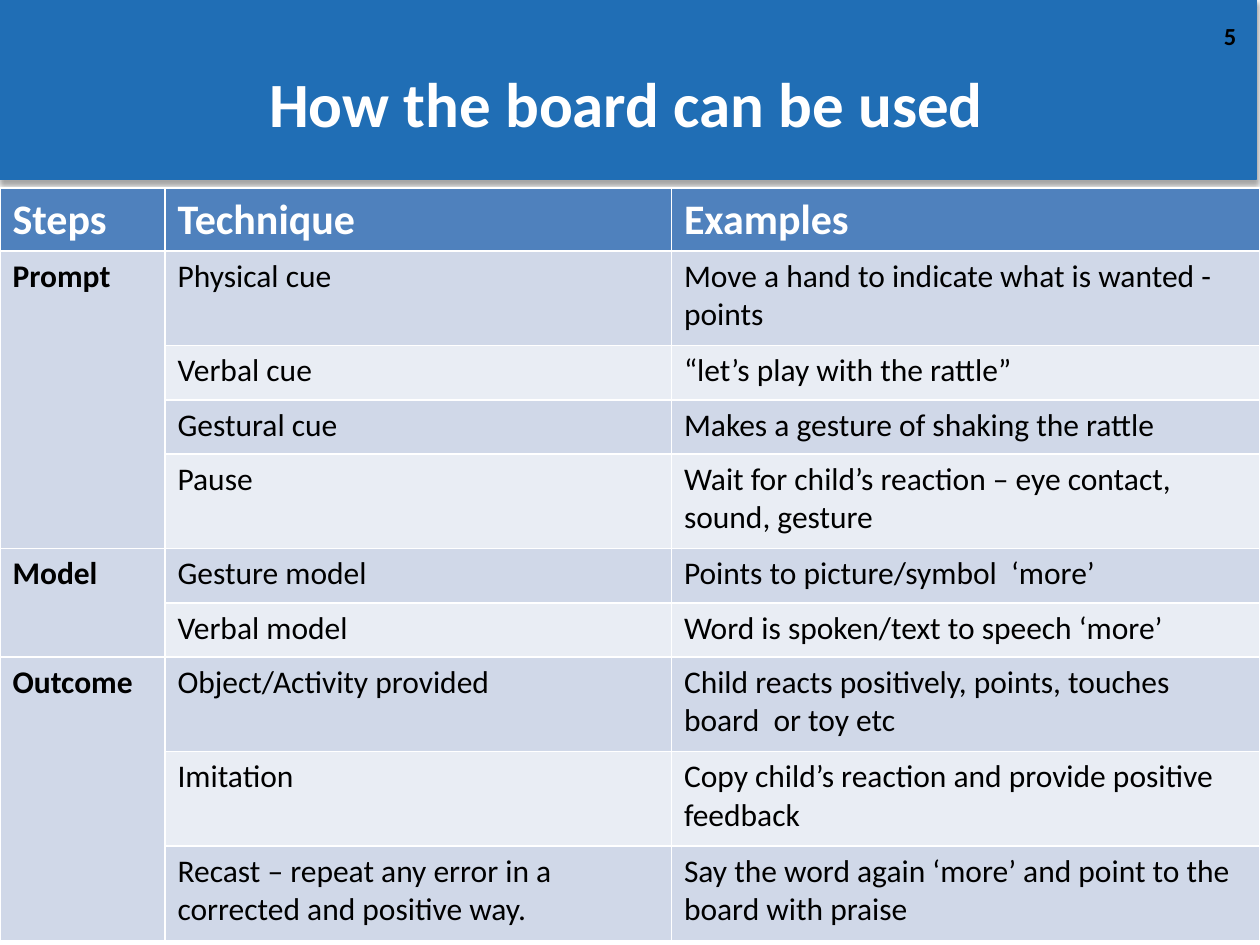
from lxml.etree import SubElement
from pptx import Presentation
from pptx.dml.color import RGBColor
from pptx.enum.shapes import MSO_SHAPE
from pptx.enum.text import MSO_ANCHOR, PP_ALIGN
from pptx.oxml.ns import qn
from pptx.util import Pt

BLUE = RGBColor(0x20, 0x6E, 0xB5)
HEAD = RGBColor(0x4F, 0x81, 0xBD)
DARK = RGBColor(0xD0, 0xD8, 0xE8)
LIGHT = RGBColor(0xE9, 0xED, 0xF4)
WHITE = RGBColor(0xFF, 0xFF, 0xFF)
BLACK = RGBColor(0, 0, 0)

NAMES = ("Steps", "Technique", "Examples")
STEPS = {
    "Prompt": [
        ("Physical cue", "Move a hand to indicate what is wanted - points"),
        ("Verbal cue", "“let’s play with the rattle”"),
        ("Gestural cue", "Makes a gesture of shaking the rattle"),
        ("Pause", "Wait for child’s reaction – eye contact, sound, gesture"),
    ],
    "Model": [
        ("Gesture model", "Points to picture/symbol  ‘more’"),
        ("Verbal model", "Word is spoken/text to speech ‘more’"),
    ],
    "Outcome": [
        ("Object/Activity provided",
         "Child reacts positively, points, touches board  or toy etc"),
        ("Imitation", "Copy child’s reaction and provide positive feedback"),
        ("Recast – repeat any error in a corrected and positive way.",
         "Say the word again ‘more’ and point to the board with praise"),
    ],
}
WIDTHS = (94.3, 289.4, 336.3)
HEAD_H, ONE_H, TWO_H = 35.3, 31, 54
WRAP = 40  # longest example that stays on one line


def style(para, size, color, bold=True, align=PP_ALIGN.LEFT):
    para.alignment = align
    para.font.color.rgb = color
    form = {"name": "Calibri", "size": Pt(size), "bold": bold}
    for key, value in form.items():
        setattr(para.font, key, value)


def place(shape, left, top, width, height):
    box = {"left": left, "top": top, "width": width, "height": height}
    for key, value in box.items():
        setattr(shape, key, Pt(value))


def add_shade(shape):
    """Soft black shadow straight below the shape."""
    shape.shadow.inherit = False
    effects = shape.element.spPr.find(qn("a:effectLst"))
    shade = SubElement(effects, qn("a:outerShdw"), blurRad=str(Pt(3.1)),
                       dist=str(Pt(1.8)), dir="5400000", rotWithShape="0")
    color = SubElement(shade, qn("a:srgbClr"), val=str(BLACK))
    SubElement(color, qn("a:alpha"), val="35000")


def add_banner(slide, left, top, width, height):
    # Blue band, behind the title
    band = slide.shapes.add_shape(
        MSO_SHAPE.RECTANGLE, Pt(left), Pt(top), Pt(width), Pt(height))
    band.fill.solid()
    band.fill.fore_color.rgb = BLUE
    band.line.color.rgb = BLUE
    band.line.width = Pt(0.75)
    add_shade(band)
    title = slide.shapes.title
    title.element.addprevious(band.element)

    # Title
    place(title, left + 36, top + 37.5, width - 74, 42)
    title.text_frame.text = "How the board can be used"
    title.text_frame.vertical_anchor = MSO_ANCHOR.MIDDLE
    style(title.text_frame.paragraphs[0], 36, WHITE, align=PP_ALIGN.CENTER)

    # Page number
    page = slide.shapes.add_textbox(
        Pt(left + width - 33.8), Pt(top + 8.6), Pt(29.5), Pt(29))
    page.text_frame.word_wrap = True
    page.text_frame.text = "5"
    style(page.text_frame.paragraphs[0], 14, BLACK, align=PP_ALIGN.RIGHT)


def fill_cell(cell, text, fill, size=18, color=BLACK, bold=False):
    cell.fill.solid()
    cell.fill.fore_color.rgb = fill
    cell.text = text
    style(cell.text_frame.paragraphs[0], size, color, bold)


def add_steps(slide, left, top, width, height):
    count = 1 + sum(len(rows) for rows in STEPS.values())
    table = slide.shapes.add_table(
        count, len(NAMES), Pt(left), Pt(top), Pt(width), Pt(height)).table
    for col, size in zip(table.columns, WIDTHS):
        col.width = Pt(size)

    # Header row
    table.rows[0].height = Pt(HEAD_H)
    for col, name in enumerate(NAMES):
        fill_cell(table.cell(0, col), name, HEAD, 24, WHITE, True)

    # One merged step cell beside its banded rows
    row = 1
    for step, pairs in STEPS.items():
        first = table.cell(row, 0)
        first.merge(table.cell(row + len(pairs) - 1, 0))
        fill_cell(first, step, DARK, bold=True)
        for pair in pairs:
            tall = len(pair[1]) > WRAP
            table.rows[row].height = Pt(TWO_H if tall else ONE_H)
            for col, text in enumerate(pair, 1):
                fill_cell(table.cell(row, col), text, DARK if row % 2 else LIGHT)
            row += 1


def main():
    deck = Presentation()
    deck.slide_width, deck.slide_height = Pt(720), Pt(540)
    slide = deck.slides.add_slide(deck.slide_layouts[5])
    add_banner(slide, 0, 0, 717.8, 102.5)
    add_steps(slide, 0, 107.5, 720, 429.3)
    deck.save("out.pptx")


if __name__ == "__main__":
    main()
